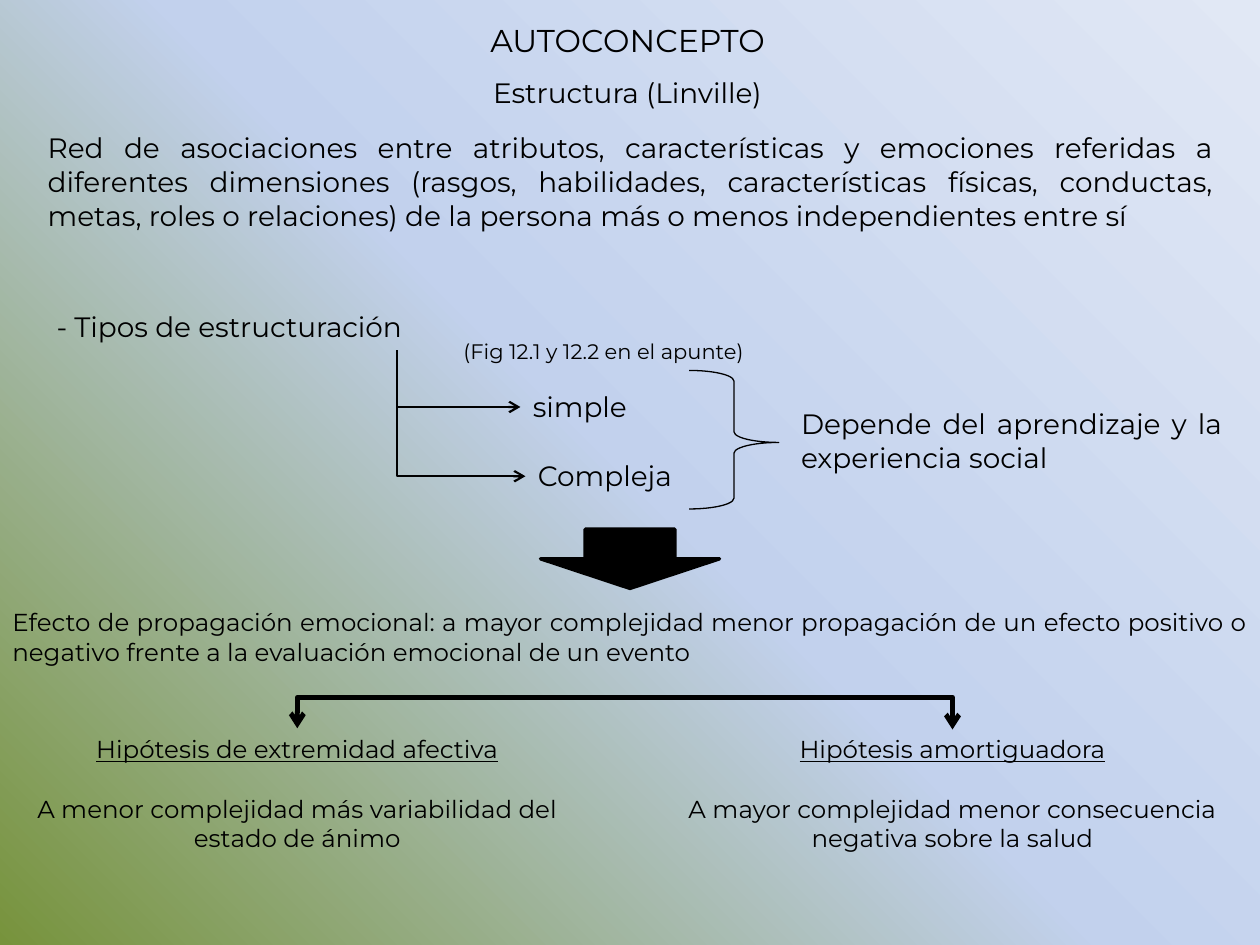
"""Build the slide on the structure of the self-concept."""
from dataclasses import dataclass

from pptx import Presentation
from pptx import util as u
from pptx.dml.color import RGBColor
from pptx.enum import shapes, text
from pptx.oxml import parse_xml
from pptx.oxml.ns import nsdecls, qn

COLUMNS, ROWS = 100, 75
SLIDE_WIDTH, SLIDE_HEIGHT = u.Inches(10), u.Inches(7.5)
CENTER, JUSTIFY = text.PP_ALIGN.CENTER, text.PP_ALIGN.JUSTIFY


@dataclass(frozen=True)
class Theme:
    """Colours, font and type sizes of the slide."""

    font: str = "Montserrat"
    ink: RGBColor = RGBColor(0, 0, 0)
    background: tuple = ((0, "77933C"), (50, "C2D1ED"), (100, "E1E8F5"))
    title: int = 18
    body: int = 16
    detail: int = 14
    note: int = 12


THEME = Theme()


def across(columns):
    """Return the length of a number of grid columns."""
    return u.Emu(round(SLIDE_WIDTH * columns / COLUMNS))


def down(rows):
    """Return the length of a number of grid rows."""
    return u.Emu(round(SLIDE_HEIGHT * rows / ROWS))


def place(left, top, width, height):
    """Turn a grid box into slide lengths."""
    return across(left), down(top), across(width), down(height)


def apply(target, values):
    """Set attributes from a dict of format values."""
    for name, value in values.items():
        setattr(target, name, value)


def paint_background(slide):
    """Fill the background with a radial gradient from the lower left corner."""
    slide.background.fill.solid()
    properties = slide.element.find(".//" + qn("p:bgPr"))
    stops = "".join(
        f'<a:gs pos="{share * 1000}"><a:srgbClr val="{color}"/></a:gs>'
        for share, color in THEME.background
    )
    gradient = parse_xml(
        f'<a:gradFill {nsdecls("a")} rotWithShape="1"><a:gsLst>{stops}</a:gsLst>'
        '<a:path path="circle"><a:fillToRect t="100000" r="100000"/></a:path></a:gradFill>'
    )
    properties.replace(properties[0], gradient)


def add_text(slide, box, paragraphs, alignment=JUSTIFY, **spacing):
    """Add a text box from (wording, size, extra font values) paragraphs."""
    frame = slide.shapes.add_textbox(*place(*box)).text_frame
    apply(frame, {"word_wrap": True, "auto_size": text.MSO_AUTO_SIZE.SHAPE_TO_FIT_TEXT})
    for index, (wording, size, extra) in enumerate(paragraphs):
        paragraph = frame.paragraphs[0] if index == 0 else frame.add_paragraph()
        apply(paragraph, {"alignment": alignment, **spacing})
        run = paragraph.add_run()
        run.text = wording
        apply(run.font, {"name": THEME.font, "size": u.Pt(size), **extra})
        run.font.color.rgb = THEME.ink


def draw_line(line, width):
    """Give a line the ink colour and a width in points."""
    line.color.rgb = THEME.ink
    line.width = u.Pt(width)


def add_shape(slide, kind, box, width, filled=False, adjustments=()):
    """Add a preset shape, either solid or in outline."""
    shape = slide.shapes.add_shape(kind, *place(*box))
    shape.shadow.inherit = False
    if filled:
        shape.fill.solid()
        shape.fill.fore_color.rgb = THEME.ink
    else:
        shape.fill.background()
    draw_line(shape.line, width)
    for index, value in enumerate(adjustments):
        shape.adjustments[index] = value


def add_bent_arrow(slide, start, run, drop, width, rise=None):
    """Add an elbow arrow that goes down then right, or a bracket that rises first."""
    connector = slide.shapes.add_connector(shapes.MSO_CONNECTOR.ELBOW, 0, 0, 0, 0)
    left, top = start
    apply(connector, {
        "left": across(left + (run - drop) / 2),
        "top": down(top + (drop - run) / 2),
        "width": down(drop),
        "height": across(run),
    })
    properties = connector.element.spPr
    frame = properties.find(qn("a:xfrm"))
    frame.set("rot", str(270 * 60000))
    frame.set("flipH", "1")
    geometry = properties.find(qn("a:prstGeom"))
    ends = ["tailEnd"]
    if rise is None:
        geometry.set("prst", "bentConnector2")
    else:
        ends.insert(0, "headEnd")
        guide = f'<a:gd {nsdecls("a")} name="adj1" fmla="val {round(-rise / drop * 100000)}"/>'
        geometry.get_or_add_avLst().append(parse_xml(guide))
    draw_line(connector.line, width)
    outline = properties.find(qn("a:ln"))
    for end in ends:
        outline.append(parse_xml(f'<a:{end} {nsdecls("a")} type="arrow"/>'))
    properties.append(parse_xml(f'<a:effectLst {nsdecls("a")}/>'))


def add_heading(slide):
    """Add the title, the subtitle and the definition."""
    add_text(slide, (18.9, -0.3, 61.8, 9.6), [
        ("AUTOCONCEPTO", THEME.title, {}),
        ("Estructura (Linville)", THEME.body, {}),
    ], CENTER, line_spacing=1.5)
    add_text(slide, (2.8, 9.9, 94.5, 11.8), [(
        "Red de asociaciones entre atributos, características y emociones referidas a "
        "diferentes dimensiones (rasgos, habilidades, características físicas, conductas, "
        "metas, roles o relaciones) de la persona más o menos independientes entre sí",
        THEME.body, {})])


def add_types(slide):
    """Add the two types of structure and what they depend on."""
    stem = (31.5, 27.8)
    add_text(slide, (3.5, 24.1, 55.9, 3.7), [("- Tipos de estructuración", THEME.body, {})])
    for wording, run, drop in (("simple", 9.8, 4.5), ("Compleja", 10.2, 10)):
        add_bent_arrow(slide, stem, run, drop, 1.25)
        box = (stem[0] + run, stem[1] + drop - 1.9, 20.5, 3.7)
        add_text(slide, box, [(wording, THEME.body, {})])
    add_shape(slide, shapes.MSO_SHAPE.RIGHT_BRACE, (54.7, 29.4, 7.1, 11), 0.75,
              adjustments=(0.12, 0.52))
    add_text(slide, (62.6, 31.8, 35.4, 6.4), [
        ("Depende del aprendizaje y la experiencia social", THEME.body, {})])
    add_text(slide, (35.8, 26.4, 33.9, 3), [
        ("(Fig 12.1 y 12.2 en el apunte)", THEME.note, {})])


def add_effect(slide):
    """Add the spreading effect and its two hypotheses."""
    add_text(slide, (0, 47.7, COLUMNS, 5.7), [(
        "Efecto de propagación emocional: a mayor complejidad menor propagación de un efecto "
        "positivo o negativo frente a la evaluación emocional de un evento",
        THEME.detail, {})])
    add_shape(slide, shapes.MSO_SHAPE.DOWN_ARROW, (42.9, 42, 14.2, 4.7), 2, filled=True)
    hypotheses = (
        ("Hipótesis de extremidad afectiva",
         "A menor complejidad más variabilidad del estado de ánimo"),
        ("Hipótesis amortiguadora",
         "A mayor complejidad menor consecuencia negativa sobre la salud"),
    )
    first_left, step, top = -0.4, 52, 57.8
    for index, (name, claim) in enumerate(hypotheses):
        add_text(slide, (first_left + index * step, top, 48, 10.4), [
            (name, THEME.detail, {"underline": True}),
            (claim, THEME.detail, {}),
        ], CENTER, space_after=u.Pt(17))
    add_bent_arrow(slide, (first_left + 24, top), step, 0.1, 2.75, rise=2.5)


def main():
    """Build and save the presentation."""
    presentation = Presentation()
    apply(presentation, {"slide_width": SLIDE_WIDTH, "slide_height": SLIDE_HEIGHT})
    slide = presentation.slides.add_slide(presentation.slide_layouts[6])
    paint_background(slide)
    add_heading(slide)
    add_types(slide)
    add_effect(slide)
    presentation.save("out.pptx")


if __name__ == "__main__":
    main()
